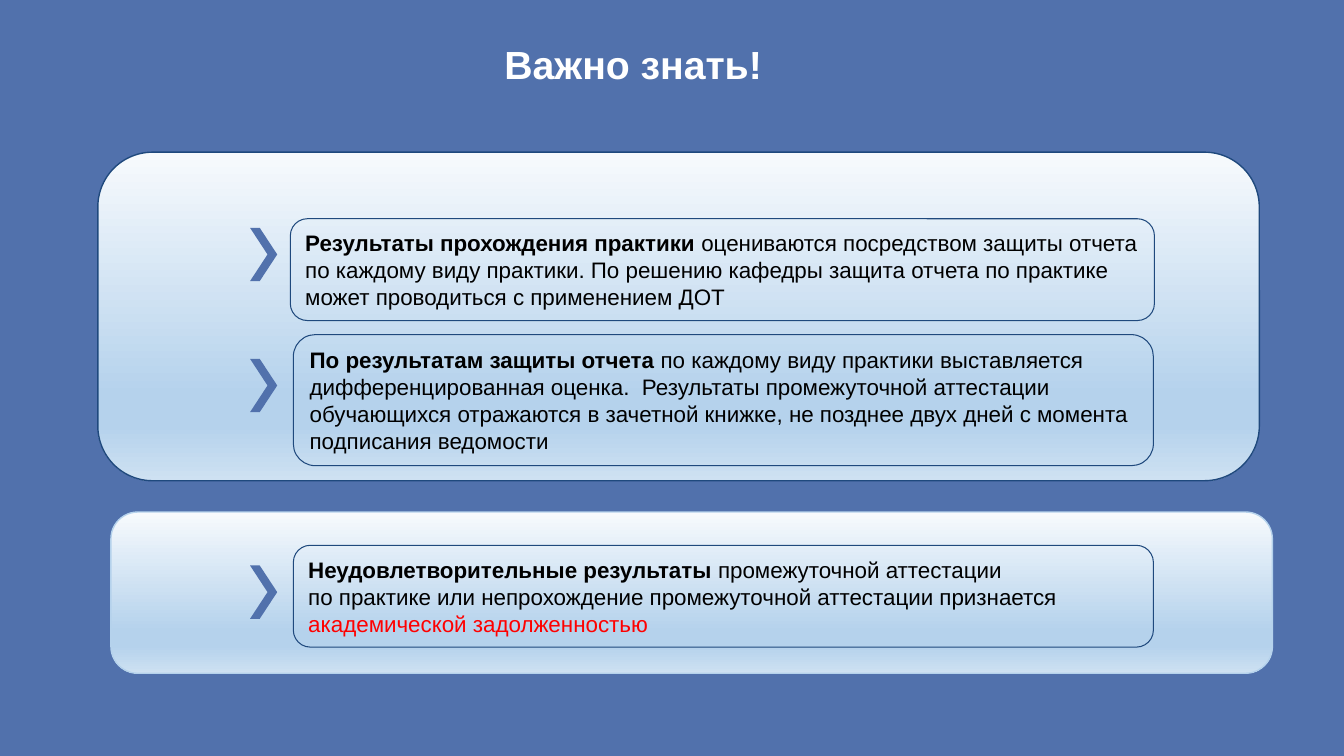
"""Builds the slide on how practice results are assessed."""
from lxml import etree
from pptx import Presentation
from pptx.dml.color import RGBColor
from pptx.enum.shapes import MSO_SHAPE
from pptx.enum.text import MSO_ANCHOR, MSO_AUTO_SIZE, PP_ALIGN
from pptx.oxml.ns import qn
from pptx.util import Inches, Pt

ROUNDED, CHEVRON = MSO_SHAPE.ROUNDED_RECTANGLE, MSO_SHAPE.CHEVRON
LEFT, CENTER = PP_ALIGN.LEFT, PP_ALIGN.CENTER
TOP, MIDDLE = MSO_ANCHOR.TOP, MSO_ANCHOR.MIDDLE
GROW = MSO_AUTO_SIZE.SHAPE_TO_FIT_TEXT

BLUE = RGBColor(0x51, 0x71, 0xAC)
NAVY = RGBColor(0x1F, 0x49, 0x7D)
PALE_BLUE = RGBColor(0xB5, 0xD2, 0xEC)
WHITE = RGBColor(0xFF, 0xFF, 0xFF)
BLACK = RGBColor(0x00, 0x00, 0x00)
RED = RGBColor(0xFF, 0x00, 0x00)
PANEL_STOPS = [(0, "F7FAFD"), (74, "B5D2EC"), (83, "B5D2EC"), (100, "CEE1F2")]

TITLE = "Важно знать!"
PANELS = [
    ((0.97, 1.51, 11.52, 3.26), NAVY),
    ((1.1, 5.08, 11.52, 1.6), PALE_BLUE),
]
RULES = [
    ((2.88, 2.17, 8.57, 1.01), 2.26, [[
        ("Результаты прохождения практики ", True, BLACK),
        ("оцениваются посредством защиты отчета по каждому виду практики. "
         "По решению кафедры защита отчета по практике может проводиться "
         "с применением ДОТ", False, BLACK)]]),
    ((2.91, 3.32, 8.53, 1.3), 3.56, [[
        ("По результатам защиты отчета ", True, BLACK),
        ("по каждому виду практики выставляется дифференцированная оценка.  "
         "Результаты промежуточной аттестации обучающихся отражаются в зачетной "
         "книжке, не позднее двух дней с момента подписания ведомости", False, BLACK)]]),
    ((2.91, 5.41, 8.53, 1.01), 5.61, [
        [("Неудовлетворительные результаты ", True, BLACK),
         ("промежуточной аттестации", False, BLACK)],
        [("по практике или непрохождение промежуточной аттестации признается ", False, BLACK),
         ("академической задолженностью", False, RED)]]),
]
CHEVRON_LEFT, CHEVRON_WIDTH, CHEVRON_HEIGHT = 2.48, 0.27, 0.53


def write(frame, paragraphs, size=16, align=LEFT, anchor=MIDDLE, spacing=None):
    frame.word_wrap = True
    frame.vertical_anchor = anchor
    for index, runs in enumerate(paragraphs):
        paragraph = frame.add_paragraph() if index else frame.paragraphs[0]
        paragraph.alignment = align
        if spacing:
            paragraph.line_spacing = spacing
        for text, bold, color in runs:
            run = paragraph.add_run()
            run.text = text
            run.font.name = "Arial"
            run.font.size = Pt(size)
            run.font.bold = bold
            run.font.color.rgb = color


def add_outline(slide, kind, box, line=None, width=1):
    shape = slide.shapes.add_shape(kind, *map(Inches, box))
    shape.shadow.inherit = False
    if line is None:
        shape.line.fill.background()
    else:
        shape.line.color.rgb = line
        shape.line.width = Pt(width)
    return shape


def add_panel(slide, box, line):
    panel = add_outline(slide, ROUNDED, box, line)
    panel.fill.gradient()
    panel.fill.gradient_angle = 270
    stops = panel.element.spPr.find(".//" + qn("a:gsLst"))
    for stop in list(stops):
        stops.remove(stop)
    for position, color in PANEL_STOPS:
        stop = etree.SubElement(stops, qn("a:gs"), pos=str(position * 1000))
        etree.SubElement(stop, qn("a:srgbClr"), val=color)


def main():
    deck = Presentation()
    deck.slide_width, deck.slide_height = Inches(13.33), Inches(7.5)
    slide = deck.slides.add_slide(deck.slide_layouts[6])
    slide.background.fill.solid()
    slide.background.fill.fore_color.rgb = BLUE

    title = slide.shapes.add_textbox(*map(Inches, (1.75, 0.32, 9.06, 0.89))).text_frame
    title.margin_left = title.margin_right = Inches(0.13)
    title.margin_top = title.margin_bottom = Inches(0.13)
    write(title, [[(TITLE, True, WHITE)]], size=28, align=CENTER, anchor=TOP, spacing=0.9)
    title.paragraphs[0].space_before = Pt(7.5)

    for box, line in PANELS:
        add_panel(slide, box, line)

    for box, chevron_top, paragraphs in RULES:
        rule = add_outline(slide, ROUNDED, box, NAVY, 0.75)
        rule.fill.background()
        write(rule.text_frame, paragraphs)
        rule.text_frame.auto_size = GROW
        chevron = add_outline(
            slide, CHEVRON, (CHEVRON_LEFT, chevron_top, CHEVRON_WIDTH, CHEVRON_HEIGHT))
        chevron.adjustments[0] = 0.644
        chevron.fill.solid()
        chevron.fill.fore_color.rgb = BLUE

    deck.save("out.pptx")


if __name__ == "__main__":
    main()
